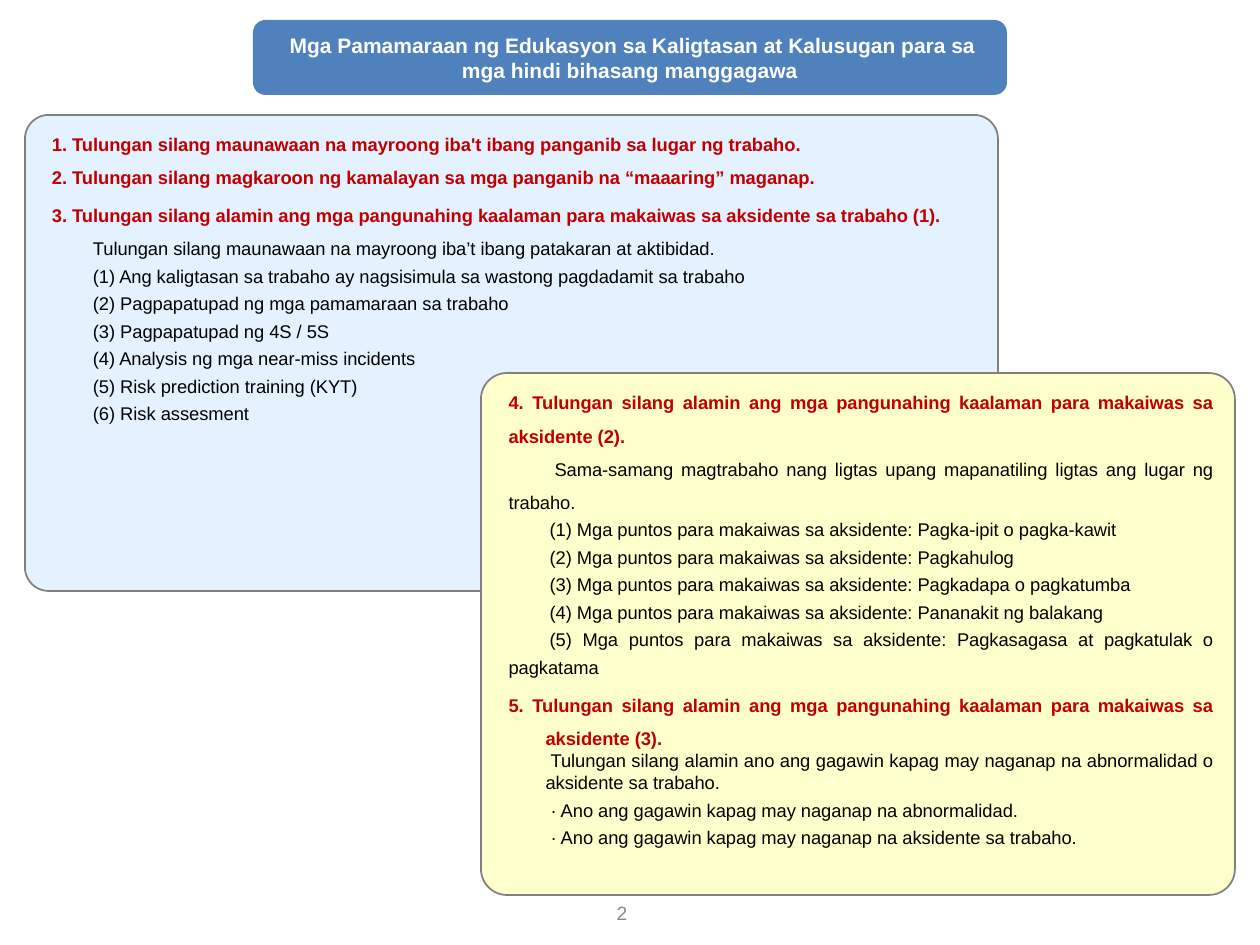
from lxml.etree import SubElement
from pptx import Presentation
from pptx.dml.color import RGBColor
from pptx.enum.shapes import MSO_SHAPE
from pptx.enum.text import MSO_ANCHOR, PP_ALIGN
from pptx.oxml.ns import qn
from pptx.util import Pt

PX = 914400 / 126

BLUE = RGBColor(0x4F, 0x81, 0xBD)
SKY = RGBColor(0x99, 0xCC, 0xFF)
CREAM = RGBColor(0xFF, 0xFF, 0xCC)
GRAY = RGBColor(0x80, 0x80, 0x80)
PALE_GRAY = RGBColor(0x8C, 0x8C, 0x8C)
RED = RGBColor(0xC0, 0x00, 0x00)
BLACK = RGBColor(0x00, 0x00, 0x00)
WHITE = RGBColor(0xFF, 0xFF, 0xFF)


def emu(px):
    return round(px * PX)


class SlideBuilder:
    font_name = "Arial"
    body_size = 10.5

    def __init__(self, slide):
        self.slide = slide

    def style(self, paragraph, text, size, color, bold, align):
        paragraph.text = text
        paragraph.alignment = align
        font = paragraph.font
        font.name, font.size, font.bold = self.font_name, Pt(size), bold
        font.color.rgb = color

    def rounded_box(self, left, top, width, height, fill):
        shape = self.slide.shapes.add_shape(
            MSO_SHAPE.ROUNDED_RECTANGLE, *map(emu, (left, top, width, height)))
        shape.shadow.inherit = False
        shape.fill.solid()
        shape.fill.fore_color.rgb = fill
        shape.line.fill.background()
        return shape

    def banner(self, left, top, width, height, text):
        shape = self.rounded_box(left, top, width, height, BLUE)
        frame = shape.text_frame
        frame.vertical_anchor = MSO_ANCHOR.MIDDLE
        self.style(frame.paragraphs[0], text, 12, WHITE, True, PP_ALIGN.CENTER)

    def panel(self, left, top, width, height, fill, lines, opacity=100):
        shape = self.rounded_box(left, top, width, height, fill)
        shape.adjustments[0] = 0.05
        shape.line.color.rgb = GRAY
        shape.line.width = Pt(1)
        if opacity < 100:
            color = shape.fill._xPr.find(qn("a:solidFill"))[0]
            SubElement(color, qn("a:alpha"), val=str(opacity * 1000))
        frame = shape.text_frame
        frame.word_wrap = True
        frame.vertical_anchor = MSO_ANCHOR.TOP
        frame.margin_left, frame.margin_top = emu(20), 0
        frame.margin_right, frame.margin_bottom = emu(13), emu(6)
        for index, line in enumerate(lines):
            paragraph = frame.paragraphs[0] if index == 0 else frame.add_paragraph()
            self.panel_line(paragraph, *line)

    def panel_line(self, paragraph, text, heading, spacing, before=0, margin=0, indent=0):
        self.style(paragraph, text, self.body_size, RED if heading else BLACK,
                   heading, PP_ALIGN.JUSTIFY)
        paragraph.line_spacing = spacing
        paragraph.space_before = Pt(before)
        properties = paragraph._p.get_or_add_pPr()
        properties.set("marL", str(emu(margin)))
        properties.set("indent", str(emu(indent)))

    def page_number(self, left, top, width, height, text):
        box = self.slide.shapes.add_textbox(*map(emu, (left, top, width, height)))
        frame = box.text_frame
        frame.word_wrap = True
        frame.vertical_anchor = MSO_ANCHOR.MIDDLE
        self.style(frame.paragraphs[0], text, 11, PALE_GRAY, False, PP_ALIGN.CENTER)


def heading(text, before=0, hang=0):
    return text, True, 1.5, before, hang, -hang


def intro(text, indent=41):
    return text, False, 1.5, 0, 0, indent


def item(text, indent=41):
    return text, False, 1.25, 0, 0, indent


def hanging(text, spacing=1.25):
    return text, False, spacing, 0, 37, 5


def numbered(texts, prefix=""):
    return [item(f"({number}) {prefix}{text}") for number, text in enumerate(texts, 1)]


RULES = [
    "Ang kaligtasan sa trabaho ay nagsisimula sa wastong pagdadamit sa trabaho",
    "Pagpapatupad ng mga pamamaraan sa trabaho",
    "Pagpapatupad ng 4S / 5S",
    "Analysis ng mga near-miss incidents",
    "Risk prediction training (KYT)",
    "Risk assesment",
]
ACCIDENTS = [
    "Pagka-ipit o pagka-kawit",
    "Pagkahulog",
    "Pagkadapa o pagkatumba",
    "Pananakit ng balakang",
    "Pagkasagasa at pagkatulak o pagkatama",
]
BASICS = "Tulungan silang alamin ang mga pangunahing kaalaman para makaiwas sa aksidente"


def main():
    presentation = Presentation()
    presentation.slide_width, presentation.slide_height = emu(1260), emu(945)
    builder = SlideBuilder(presentation.slides.add_slide(presentation.slide_layouts[6]))

    # Steps 1 to 3
    builder.panel(25, 115, 973, 476, SKY, [
        heading("1. Tulungan silang maunawaan na mayroong iba't ibang panganib "
                "sa lugar ng trabaho."),
        heading("2. Tulungan silang magkaroon ng kamalayan sa mga panganib na "
                "“maaaring” maganap."),
        heading(f"3. {BASICS} sa trabaho (1).", before=3),
        intro("Tulungan silang maunawaan na mayroong iba’t ibang patakaran at aktibidad."),
        *numbered(RULES),
    ], opacity=26)

    # Title
    builder.banner(253, 20, 754, 75,
                   " Mga Pamamaraan ng Edukasyon sa Kaligtasan at Kalusugan para sa "
                   "mga hindi bihasang manggagawa")

    # Steps 4 and 5
    builder.panel(481, 373, 754, 522, CREAM, [
        heading(f"4. {BASICS} (2).", before=3),
        intro("Sama-samang magtrabaho nang ligtas upang mapanatiling ligtas "
              "ang lugar ng trabaho.", indent=46),
        *numbered(ACCIDENTS, "Mga puntos para makaiwas sa aksidente: "),
        heading(f"5. {BASICS} (3).", before=3, hang=37),
        hanging("Tulungan silang alamin ano ang gagawin kapag may naganap na "
                "abnormalidad o aksidente sa trabaho.", spacing=1.0),
        hanging("· Ano ang gagawin kapag may naganap na abnormalidad."),
        hanging("· Ano ang gagawin kapag may naganap na aksidente sa trabaho."),
    ])

    # Page number
    builder.page_number(475, 888, 294, 50, "2")

    presentation.save("out.pptx")


if __name__ == "__main__":
    main()
